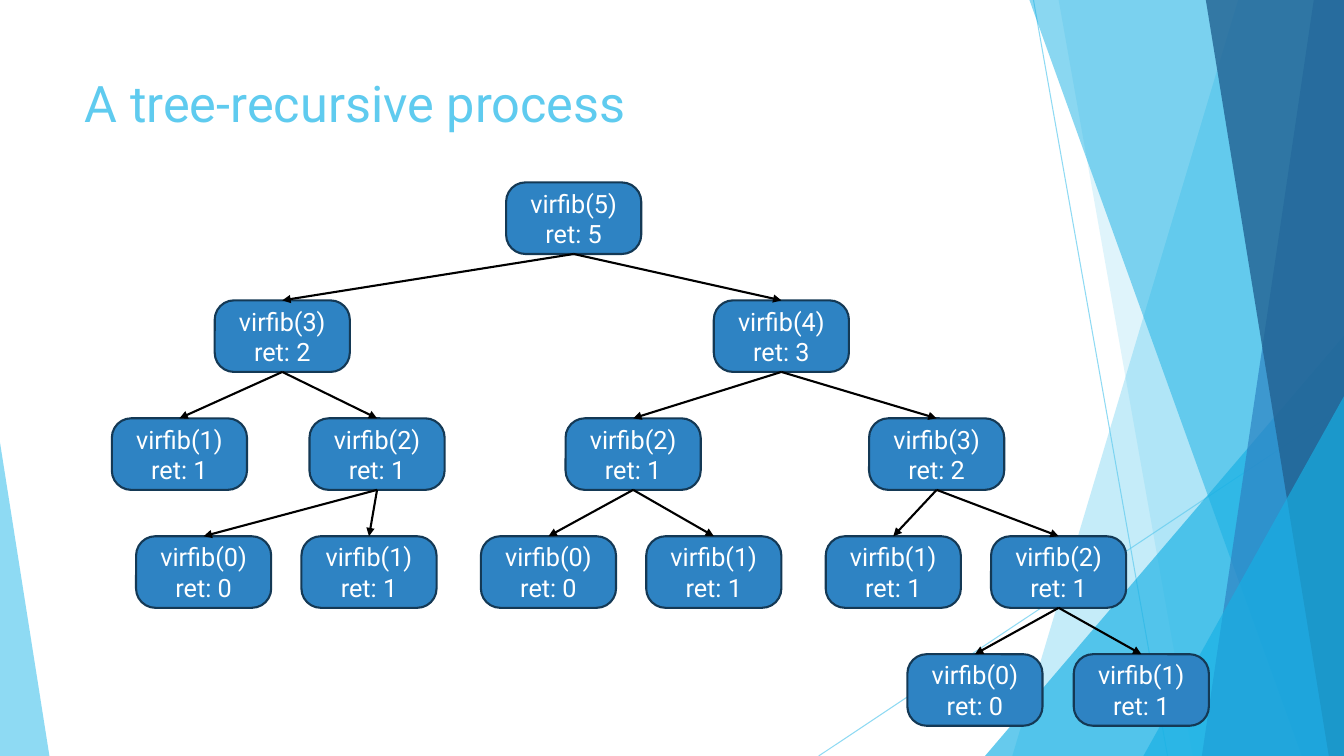
from dataclasses import dataclass, field

from pptx import Presentation
from pptx.dml.color import RGBColor
from pptx.enum.shapes import MSO_CONNECTOR as Connector, MSO_SHAPE as Preset
from pptx.enum.text import MSO_ANCHOR as Anchor, PP_ALIGN as Align
from pptx.oxml.ns import qn
from pptx.oxml.xmlchemy import OxmlElement
from pptx.shapes.autoshape import Shape
from pptx.shapes.connector import Connector as Line
from pptx.slide import Slide
from pptx.text.text import _Paragraph as Paragraph
from pptx.util import Inches, Pt


@dataclass(frozen=True)
class Theme:
    font: str = "Roboto"
    title_size: int = 36
    call_size: int = 18
    sky: str = "5FCBEF"
    cyan: str = "17B0E4"
    blue: str = "2E83C3"
    navy: str = "226292"
    outline: str = "143955"
    arrow: str = "000000"
    white: str = "FFFFFF"


@dataclass(frozen=True)
class Ray:
    start: tuple[float, float]
    end: tuple[float, float]


@dataclass(frozen=True)
class Band:
    """Full-height facet reaching the right edge of the page."""
    top_left: float
    bottom_left: float
    color: str
    opacity: int


@dataclass(frozen=True)
class Corner:
    """Triangle standing on the bottom edge of the page."""
    left: float
    top: float
    width: float
    apex: float
    color: str
    opacity: int


@dataclass(frozen=True)
class Call:
    """One call of the tree; its children are the calls n-2 and n-1."""
    n: int
    left: float
    children: list["Call"] = field(default_factory=list)


THEME = Theme()
PAGE_WIDTH, PAGE_HEIGHT = 13.33, 7.5
BOX_WIDTH, BOX_HEIGHT = 1.34, 0.71
TREE_TOP, LEVEL_STEP = 1.81, 1.17

RAYS = [
    Ray((10.25, 0), (11.58, 7.5)),
    Ray((13.33, 4.03), (8.12, 7.5)),
]

# Facets from back to front
FACETS = [
    Band(12.28, 10.04, THEME.sky, 36),
    Band(10.5, 11.83, THEME.sky, 20),
    Corner(9.77, 3.33, 3.56, 1, THEME.cyan, 66),
    Band(10.21, 12.91, THEME.cyan, 50),
    Band(13.03, 11.92, THEME.blue, 70),
    Band(11.96, 13.18, THEME.navy, 80),
    Corner(11.34, 3.93, 1.99, 1, THEME.cyan, 66),
    Corner(0, 4.39, 0.49, 0, THEME.sky, 70),
]

TREE = Call(5, 5.02, [
    Call(3, 2.13, [
        Call(1, 1.11),
        Call(2, 3.07, [Call(0, 1.35), Call(1, 2.99)]),
    ]),
    Call(4, 7.08, [
        Call(2, 5.61, [Call(0, 4.77), Call(1, 6.41)]),
        Call(3, 8.62, [
            Call(1, 8.19),
            Call(2, 9.83, [Call(0, 9), Call(1, 10.65)]),
        ]),
    ]),
])


def fibonacci(n: int) -> int:
    return n if n < 2 else fibonacci(n - 2) + fibonacci(n - 1)


def set_opacity(item: Shape | Line, percent: int) -> None:
    for color in item.element.spPr.iter(qn("a:srgbClr")):
        alpha = OxmlElement("a:alpha")
        alpha.set("val", str(percent * 1000))
        color.append(alpha)


def add_span(para: Paragraph, text: str, size: int, color: str) -> None:
    span = para.add_run()
    span.text = text
    span.font.name = THEME.font
    span.font.size = Pt(size)
    span.font.color.rgb = RGBColor.from_string(color)


def add_line(page: Slide, ray: Ray, color: str, width: float) -> Line:
    points = [Inches(value) for value in (*ray.start, *ray.end)]
    line = page.shapes.add_connector(Connector.STRAIGHT, *points)
    line.line.color.rgb = RGBColor.from_string(color)
    line.line.width = Pt(width)
    line.element.spPr.append(OxmlElement("a:effectLst"))
    return line


def add_facet(page: Slide, facet: Band | Corner) -> None:
    if isinstance(facet, Band):
        outline = [(facet.top_left, 0), (PAGE_WIDTH, 0),
                   (PAGE_WIDTH, PAGE_HEIGHT), (facet.bottom_left, PAGE_HEIGHT)]
        points = [(Inches(x), Inches(y)) for x, y in outline]
        builder = page.shapes.build_freeform(*points[0])
        builder.add_line_segments(points[1:], close=True)
        shape = builder.convert_to_shape()
    else:
        shape = page.shapes.add_shape(
            Preset.ISOSCELES_TRIANGLE, Inches(facet.left), Inches(facet.top),
            Inches(facet.width), Inches(PAGE_HEIGHT - facet.top))
        shape.adjustments[0] = facet.apex
    shape.shadow.inherit = False
    shape.fill.solid()
    shape.fill.fore_color.rgb = RGBColor.from_string(facet.color)
    shape.line.fill.background()
    set_opacity(shape, facet.opacity)


def add_title(page: Slide, text: str) -> None:
    title = page.shapes.title
    title.left, title.top = Inches(0.74), Inches(0.67)
    title.width, title.height = Inches(9.4), Inches(1.44)
    title.text_frame.vertical_anchor = Anchor.TOP
    para = title.text_frame.paragraphs[0]
    para.alignment = Align.LEFT
    add_span(para, text, THEME.title_size, THEME.sky)


def add_box(page: Slide, call: Call, depth: int) -> Shape:
    box = page.shapes.add_shape(
        Preset.ROUNDED_RECTANGLE, Inches(call.left),
        Inches(TREE_TOP + depth * LEVEL_STEP),
        Inches(BOX_WIDTH), Inches(BOX_HEIGHT))
    box.adjustments[0] = 0.27
    box.shadow.inherit = False
    box.fill.solid()
    box.fill.fore_color.rgb = RGBColor.from_string(THEME.blue)
    box.line.color.rgb = RGBColor.from_string(THEME.outline)
    box.line.width = Pt(1.5)
    frame = box.text_frame
    frame.word_wrap = True
    frame.vertical_anchor = Anchor.MIDDLE
    call_para, result_para = frame.paragraphs[0], frame.add_paragraph()
    for para, text in ((call_para, f"virfib({call.n})"),
                       (result_para, f"ret: {fibonacci(call.n)}")):
        para.alignment = Align.CENTER
        add_span(para, text, THEME.call_size, THEME.white)
    return box


def add_arrow(page: Slide, parent: Shape, child: Shape) -> None:
    arrow = add_line(page, Ray((0, 0), (1, 1)), THEME.arrow, 1.5)
    arrow.begin_connect(parent, 2)
    arrow.end_connect(child, 0)
    head = OxmlElement("a:tailEnd")
    head.set("type", "triangle")
    arrow.line.fill  # the outline already exists, so the head goes last in it
    arrow.element.spPr.find(qn("a:ln")).append(head)


def add_tree(page: Slide, call: Call, depth: int = 0) -> Shape:
    box = add_box(page, call, depth)
    for child in call.children:
        add_arrow(page, box, add_tree(page, child, depth + 1))
    return box


def main() -> None:
    deck = Presentation()
    deck.slide_width, deck.slide_height = Inches(PAGE_WIDTH), Inches(PAGE_HEIGHT)
    page = deck.slides.add_slide(deck.slide_layouts[5])

    # Background decoration
    for ray in RAYS:
        set_opacity(add_line(page, ray, THEME.sky, 0.75), 70)
    for facet in FACETS:
        add_facet(page, facet)

    # Title and call tree
    add_title(page, "A tree-recursive process")
    add_tree(page, TREE)
    deck.save("out.pptx")


if __name__ == "__main__":
    main()
